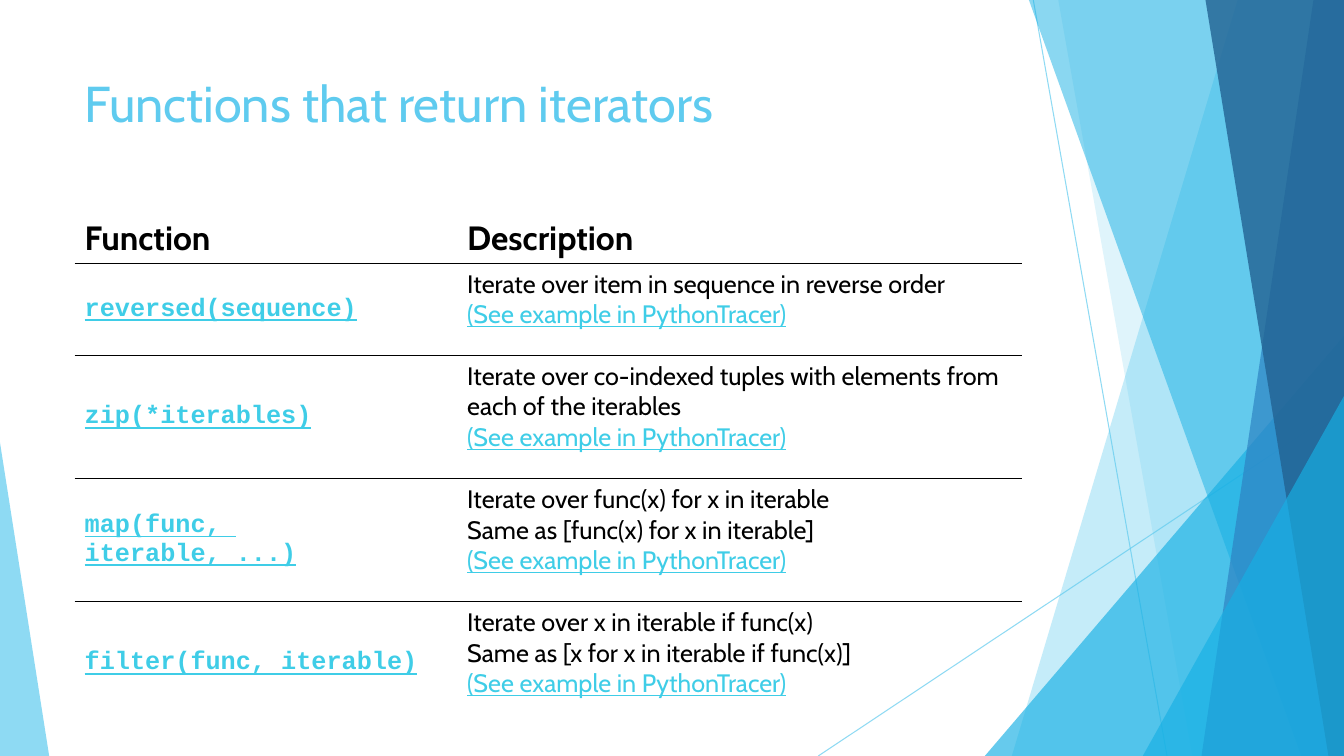
from lxml import etree
from pptx import Presentation
from pptx.dml.color import RGBColor
from pptx.enum.shapes import MSO_CONNECTOR, MSO_SHAPE
from pptx.enum.text import MSO_ANCHOR, PP_ALIGN
from pptx.oxml.ns import qn
from pptx.util import Cm, Pt

STRAIGHT = MSO_CONNECTOR.STRAIGHT
TRIANGLE = MSO_SHAPE.ISOSCELES_TRIANGLE
TOP, MIDDLE = MSO_ANCHOR.TOP, MSO_ANCHOR.MIDDLE
LEFT = PP_ALIGN.LEFT

# Content
TITLE = "Functions that return iterators"
HEADERS = ("Function", "Description")
EXAMPLE = "(See example in PythonTracer)"
FUNCTIONS = [
    (["reversed(sequence)"], ["Iterate over item in sequence in reverse order"]),
    (["zip(*iterables)"],
     ["Iterate over co-indexed tuples with elements from each of the iterables"]),
    (["map(func, ", "iterable, ...)"],
     ["Iterate over func(x) for x in iterable",
      "Same as [func(x) for x in iterable]"]),
    (["filter(func, iterable)"],
     ["Iterate over x in iterable if func(x)",
      "Same as [x for x in iterable if func(x)]"]),
]

# Look, lengths in cm
WIDTH, HEIGHT = 33.87, 19.05
TEXT_FONT, CODE_FONT = "Cabin", "Courier New"
BLACK, LINK, SKY, CYAN, BLUE, NAVY = (
    "000000", "3FCDE7", "5FCBEF", "17B0E4", "2E83C3", "226292")
MARGIN, TABLE_TOP = 1.88, 5.36
COLUMNS = (9.64, 14.23)
ROWS = (1.27, 2.31, 3.1, 3.1, 3.1)
RAYS = [(26.04, 0, 29.41, HEIGHT), (WIDTH, 10.24, 20.62, HEIGHT)]
# Facets reach the right edge: top x, bottom x, colour, opacity in percent
BACK_FACETS = [(31.19, 25.5, SKY, 36), (26.67, 30.05, SKY, 20)]
FRONT_FACETS = [(25.93, 32.79, CYAN, 50), (33.1, 30.28, BLUE, 70),
                (30.38, 33.48, NAVY, 80)]
# Peaks stand on the bottom edge: left, top, width, apex, colour, opacity
BACK_PEAK = (24.82, 8.46, 9.05, 1, CYAN, 66)
FRONT_PEAKS = [(28.8, 9.98, 5.07, 1, CYAN, 66), (0, 11.15, 1.24, 0, SKY, 70)]


def rgb(color):
    return RGBColor.from_string(color)


def set_opacity(parent, percent):
    color = next(parent.iter(qn("a:srgbClr")))
    etree.SubElement(color, qn("a:alpha")).set("val", str(percent * 1000))


def paint(shape, color, opacity):
    shape.shadow.inherit = False
    shape.fill.solid()
    shape.fill.fore_color.rgb = rgb(color)
    set_opacity(shape._element.spPr, opacity)
    shape.line.fill.background()


def add_ray(shapes, x1, y1, x2, y2):
    ray = shapes.add_connector(STRAIGHT, Cm(x1), Cm(y1), Cm(x2), Cm(y2))
    ray.line.color.rgb = rgb(SKY)
    ray.line.width = Pt(0.75)
    set_opacity(ray._element.spPr, 70)
    etree.SubElement(ray._element.spPr, qn("a:effectLst"))


def add_facet(shapes, top_x, bottom_x, color, opacity):
    outline = shapes.build_freeform(Cm(top_x), 0)
    outline.add_line_segments([(Cm(WIDTH), 0), (Cm(WIDTH), Cm(HEIGHT)),
                               (Cm(bottom_x), Cm(HEIGHT))], close=True)
    paint(outline.convert_to_shape(), color, opacity)


def add_peak(shapes, left, top, width, apex, color, opacity):
    peak = shapes.add_shape(TRIANGLE, Cm(left), Cm(top), Cm(width), Cm(HEIGHT - top))
    peak.adjustments[0] = apex
    paint(peak, color, opacity)


def style(font, color, size=None, name=None, bold=None, underline=None):
    font.color.rgb = rgb(color)
    if size:
        font.size, font.name = Pt(size), name
    font.bold, font.underline = bold, underline


def add_lines(paragraph, lines):
    for index, line in enumerate(lines):
        if index:
            paragraph.add_line_break()
        paragraph.add_run().text = line


def add_rule(cell, side):
    rule = etree.Element(qn("a:" + side), w=str(Pt(1)))
    fill = etree.SubElement(rule, qn("a:solidFill"))
    etree.SubElement(fill, qn("a:srgbClr"), val=BLACK)
    cell._tc.get_or_add_tcPr().insert(0, rule)


def add_function_table(shapes):
    table = shapes.add_table(len(ROWS), len(COLUMNS), Cm(MARGIN), Cm(TABLE_TOP),
                             Cm(sum(COLUMNS)), Cm(sum(ROWS))).table
    table.horz_banding = False
    style_id = next(table._tbl.iter(qn("a:tableStyleId")))
    style_id.text = "{2D5ABB26-0587-4C30-8999-92F81FD0307C}"
    for column, width in zip(table.columns, COLUMNS):
        column.width = Cm(width)
    for row, height in zip(table.rows, ROWS):
        row.height = Cm(height)

    # Rules between the rows
    last = len(ROWS) - 1
    for index, row in enumerate(table.rows):
        for cell in row.cells:
            cell.vertical_anchor = MIDDLE
            cell.fill.background()
            if index < last:
                add_rule(cell, "lnB")
            if index:
                add_rule(cell, "lnT")

    # Header row
    for column, header in enumerate(HEADERS):
        paragraph = table.cell(0, column).text_frame.paragraphs[0]
        paragraph.add_run().text = header
        style(paragraph.font, BLACK, 24, TEXT_FONT, bold=True)

    # One row for each function
    for row, (signature, description) in enumerate(FUNCTIONS, start=1):
        code = table.cell(row, 0).text_frame.paragraphs[0]
        add_lines(code, signature)
        style(code.font, LINK, 18, CODE_FONT, bold=True, underline=True)

        description_cell = table.cell(row, 1)
        description_cell.margin_bottom = Cm(0.64)
        paragraph = description_cell.text_frame.paragraphs[0]
        add_lines(paragraph, description + [EXAMPLE])
        style(paragraph.font, BLACK, 18, TEXT_FONT)
        style(paragraph.runs[-1].font, LINK, underline=True)


def main():
    deck = Presentation()
    deck.slide_width, deck.slide_height = Cm(WIDTH), Cm(HEIGHT)
    slide = deck.slides.add_slide(deck.slide_layouts[5])
    shapes = slide.shapes

    # Background facets
    for ray in RAYS:
        add_ray(shapes, *ray)
    for facet in BACK_FACETS:
        add_facet(shapes, *facet)
    add_peak(shapes, *BACK_PEAK)
    for facet in FRONT_FACETS:
        add_facet(shapes, *facet)
    for peak in FRONT_PEAKS:
        add_peak(shapes, *peak)

    # Title
    title = shapes.title
    title.left, title.top = Cm(MARGIN), Cm(1.7)
    title.width, title.height = Cm(sum(COLUMNS)), Cm(3.66)
    title.text_frame.text = TITLE
    title.text_frame.vertical_anchor = TOP
    heading = title.text_frame.paragraphs[0]
    heading.alignment = LEFT
    style(heading.font, SKY, 36, TEXT_FONT)

    add_function_table(shapes)
    deck.save("out.pptx")


if __name__ == "__main__":
    main()
